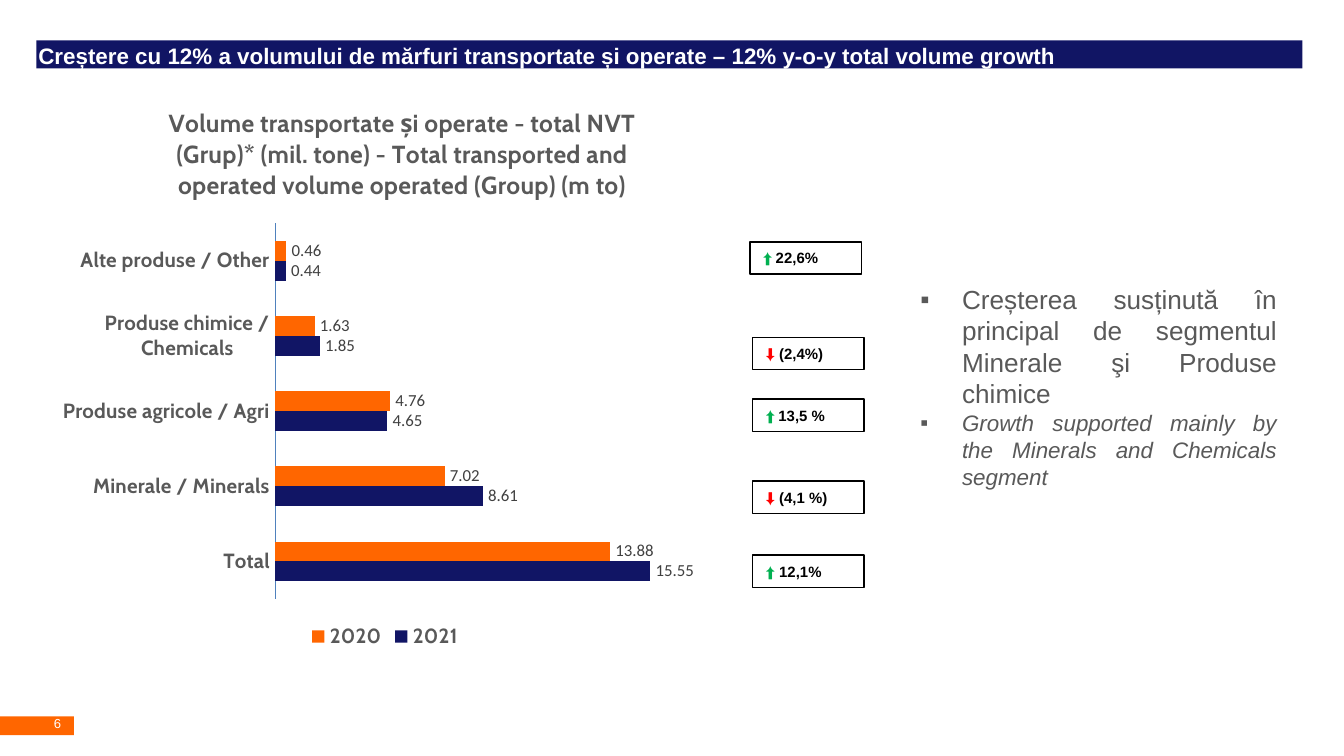
from lxml import etree
from pptx import Presentation
from pptx.chart.data import CategoryChartData
from pptx.dml.color import RGBColor
from pptx.enum.chart import XL_CHART_TYPE, XL_LABEL_POSITION, XL_LEGEND_POSITION, XL_TICK_LABEL_POSITION, XL_TICK_MARK
from pptx.enum.shapes import MSO_SHAPE
from pptx.enum.text import MSO_ANCHOR, PP_ALIGN
from pptx.oxml import parse_xml
from pptx.oxml.ns import nsdecls, qn
from pptx.util import Inches, Pt

RECTANGLE = MSO_SHAPE.RECTANGLE
BAR_CLUSTERED = XL_CHART_TYPE.BAR_CLUSTERED
OUTSIDE_END = XL_LABEL_POSITION.OUTSIDE_END
LEGEND_BOTTOM = XL_LEGEND_POSITION.BOTTOM
LABELS_NEXT = XL_TICK_LABEL_POSITION.NEXT_TO_AXIS
NO_TICKS = XL_TICK_MARK.NONE
TOP, MIDDLE = MSO_ANCHOR.TOP, MSO_ANCHOR.MIDDLE
LEFT, JUSTIFY = PP_ALIGN.LEFT, PP_ALIGN.JUSTIFY

COLUMNS, ROWS = 100, 56.25
CELL = Inches(0.1)
NAVY, BAR_NAVY, ORANGE, GREY = "111564", "111565", "FF6600", "595959"
WHITE, BLACK, GREEN, RED = "FFFFFF", "000000", "00B050", "FF0000"


def color(value):
    return RGBColor.from_string(value)


def grid(*cells):
    return [round(cell * CELL) for cell in cells]


class SlideBuilder:
    body_font = "Arial"
    chart_font = "Cabin"
    label_font = "Calibri"

    def __init__(self, slide):
        self.slide = slide

    def style(self, font, size, value, name=None, bold=False, italic=False):
        font.name = name or self.body_font
        font.size = Pt(size)
        font.bold = bold
        font.italic = italic
        font.color.rgb = color(value)

    def frame(self, shape, anchor=TOP, insets=None):
        frame = shape.text_frame
        frame.word_wrap = True
        frame.vertical_anchor = anchor
        if insets:
            frame.margin_left, frame.margin_top, frame.margin_right, frame.margin_bottom = grid(*insets)
        frame.paragraphs[0].alignment = LEFT
        return frame

    def box(self, area, fill=None, line=None):
        shape = self.slide.shapes.add_shape(RECTANGLE, *grid(*area))
        shape.shadow.inherit = False
        if fill:
            shape.fill.solid()
            shape.fill.fore_color.rgb = color(fill)
        else:
            shape.fill.background()
        if line:
            shape.line.color.rgb = color(line)
            shape.line.width = Pt(0.75)
        else:
            shape.line.fill.background()
        return shape

    def banner(self, area, text):
        frame = self.frame(self.box(area, NAVY), insets=(0.15, 0.1, 0, 0))
        paragraph = frame.paragraphs[0]
        paragraph.text = text
        paragraph.space_before = Pt(0.7)
        self.style(paragraph.font, 12, WHITE, bold=True)

    def page_number(self, area, text):
        shape = self.slide.shapes.add_textbox(*grid(*area))
        paragraph = self.frame(shape, insets=(0.4, 0, 0, 0)).paragraphs[0]
        paragraph.text = text
        paragraph.space_before = Pt(0.3)
        self.style(paragraph.font, 7, WHITE)

    def change(self, left, top, text, rising, arrow_font=None):
        frame = self.frame(self.box((left, top, 8.3, 2.4), line=BLACK), MIDDLE)
        arrow, value = ("⬆ ", GREEN) if rising else ("⬇ ", RED)
        for words, tint, name in ((arrow, value, arrow_font), (text, BLACK, None)):
            run = frame.paragraphs[0].add_run()
            run.text = words
            self.style(run.font, 8, tint, name, bold=True)

    def bullets(self, area, items):
        frame = self.frame(self.slide.shapes.add_textbox(*grid(*area)))
        for index, (text, size, italic) in enumerate(items):
            paragraph = frame.add_paragraph() if index else frame.paragraphs[0]
            paragraph.text = text
            paragraph.alignment = JUSTIFY
            self.style(paragraph.font, size, GREY, italic=italic)
            properties = paragraph._p.get_or_add_pPr()
            indent = Inches(0.31)
            properties.set("marL", str(indent))
            properties.set("indent", str(-indent))
            for tag, values in (("a:buFont", {"typeface": self.body_font}), ("a:buChar", {"char": "▪"})):
                bullet = etree.Element(qn(tag), values)
                properties.insert_element_before(bullet, "a:tabLst", "a:defRPr", "a:extLst")

    def place(self, parent, target, **percents):
        values = "".join(f'<c:{key} val="{percent / 100:.3f}"/>' for key, percent in percents.items())
        inner = f'<c:layoutTarget val="{target}"/>' if target else ""
        layout = parse_xml(
            f'<c:layout {nsdecls("c")}><c:manualLayout>{inner}<c:xMode val="edge"/>'
            f'<c:yMode val="edge"/>{values}</c:manualLayout></c:layout>')
        for old in parent.findall(qn("c:layout")):
            parent.remove(old)
        text = parent.find(qn("c:tx"))
        parent.insert(0 if text is None else parent.index(text) + 1, layout)

    def bar_chart(self, area, title, categories, series):
        data = CategoryChartData(number_format="0.00")
        data.categories = categories
        for name, values, _ in series:
            data.add_series(name, values)
        chart = self.slide.shapes.add_chart(BAR_CLUSTERED, *grid(*area), data).chart
        self.style(chart.font, 10, BLACK, self.label_font)

        chart.has_title = True
        paragraph = chart.chart_title.text_frame.paragraphs[0]
        paragraph.text = title
        self.style(paragraph.font, 13.2, GREY, self.chart_font, bold=True)
        chart.chart_title.include_in_layout = False
        self.place(chart.chart_title._element, None, x=17.2, y=2.5)

        chart.has_legend = True
        chart.legend.position = LEGEND_BOTTOM
        chart.legend.include_in_layout = False
        self.style(chart.legend.font, 11, GREY, self.chart_font, bold=True)

        axis = chart.category_axis
        axis.major_tick_mark = NO_TICKS
        axis.minor_tick_mark = NO_TICKS
        axis.tick_label_position = LABELS_NEXT
        axis.format.line.color.rgb = color("4F81BD")
        axis.format.line.width = Pt(0.75)
        self.style(axis.tick_labels.font, 11, GREY, self.chart_font, bold=True)
        chart.value_axis.visible = False
        chart.value_axis.has_major_gridlines = False
        chart.value_axis.minimum_scale, chart.value_axis.maximum_scale = 0, 18

        plot = chart.plots[0]
        plot.gap_width, plot.overlap = 182, 0
        plot.vary_by_categories = False
        for bars, (_, _, fill) in zip(plot.series, series):
            bars.format.fill.solid()
            bars.format.fill.fore_color.rgb = color(fill)
            labels = bars.data_labels
            labels.show_value = True
            labels.position = OUTSIDE_END
            labels.number_format = "0.00"
            labels.number_format_is_linked = False
            self.style(labels.font, 9, "404040", self.label_font)
        plot_area = chart._chartSpace.chart.plotArea
        self.place(plot_area, "inner", x=33.7, y=24, w=64.5, h=66.2)


def main():
    presentation = Presentation()
    presentation.slide_width, presentation.slide_height = grid(COLUMNS, ROWS)
    builder = SlideBuilder(presentation.slides.add_slide(presentation.slide_layouts[6]))

    builder.box((0, 53.3, 5.5, 1.4), ORANGE)
    builder.banner(
        (2.7, 3, 94.2, 2.1),
        "Creștere cu 12% a volumului de mărfuri transportate și operate – 12% y-o-y total volume growth")
    builder.page_number((3.6, 53.2, 1.9, 1.5), "6")
    builder.bar_chart(
        (3.6, 6.5, 50.1, 42.2),
        "Volume transportate și operate - total NVT (Grup)* (mil. tone) - "
        "Total transported and operated volume operated (Group) (m to)",
        ["Total", "Minerale / Minerals", "Produse agricole / Agri",
         "Produse chimice / Chemicals", "Alte produse / Other"],
        [("2021", (15.55, 8.61, 4.65, 1.85, 0.44), BAR_NAVY),
         ("2020", (13.88, 7.02, 4.76, 1.63, 0.46), ORANGE)])
    for change in (
        (55.8, 18, "22,6%", True, "Calibri"),
        (56, 25.1, "(2,4%)", False),
        (56, 29.7, "13,5 %", True, "Calibri"),
        (56, 35.8, "(4,1 %)", False),
        (56, 41.3, "12,1%", True),
    ):
        builder.change(*change)
    builder.bullets((67.5, 20.6, 28.5, 18.8), [
        ("Creșterea susținută în principal de segmentul Minerale şi Produse chimice", 14, False),
        ("Growth supported mainly by the Minerals and Chemicals segment", 12, True)])
    presentation.save("out.pptx")


if __name__ == "__main__":
    main()
